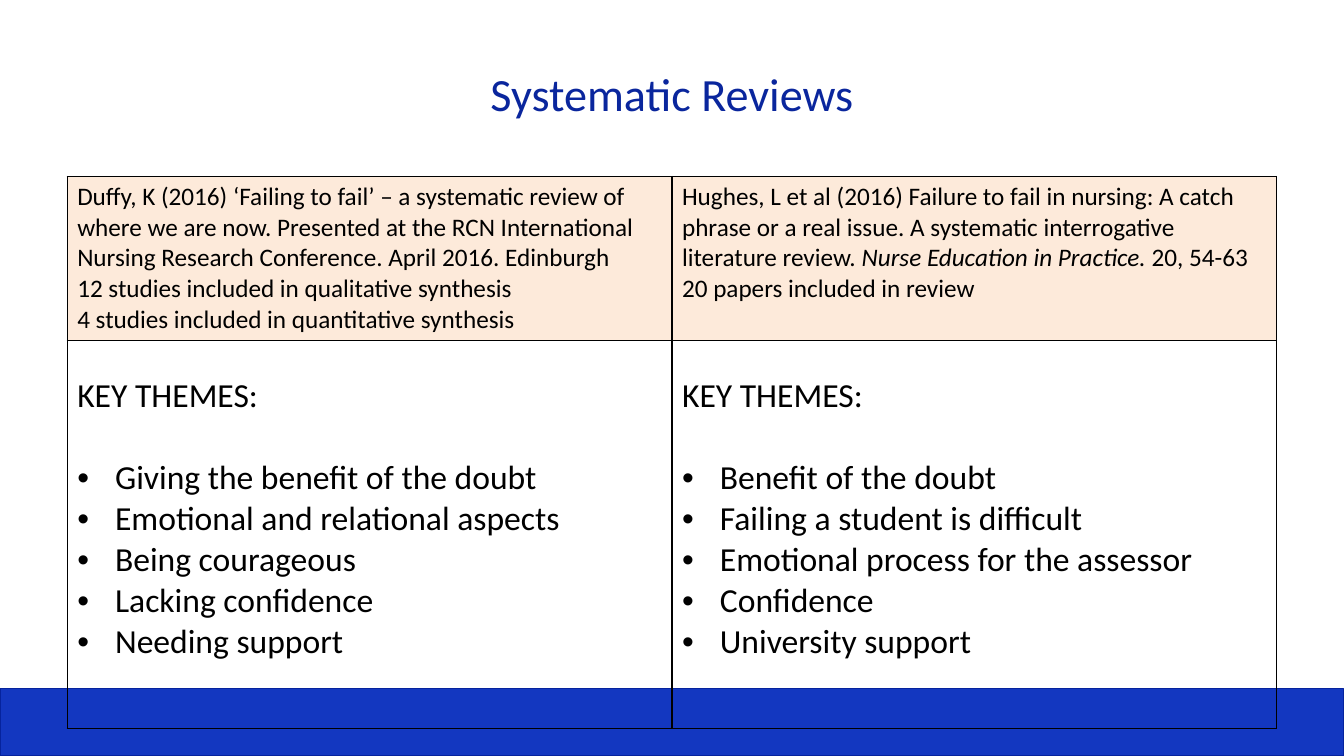
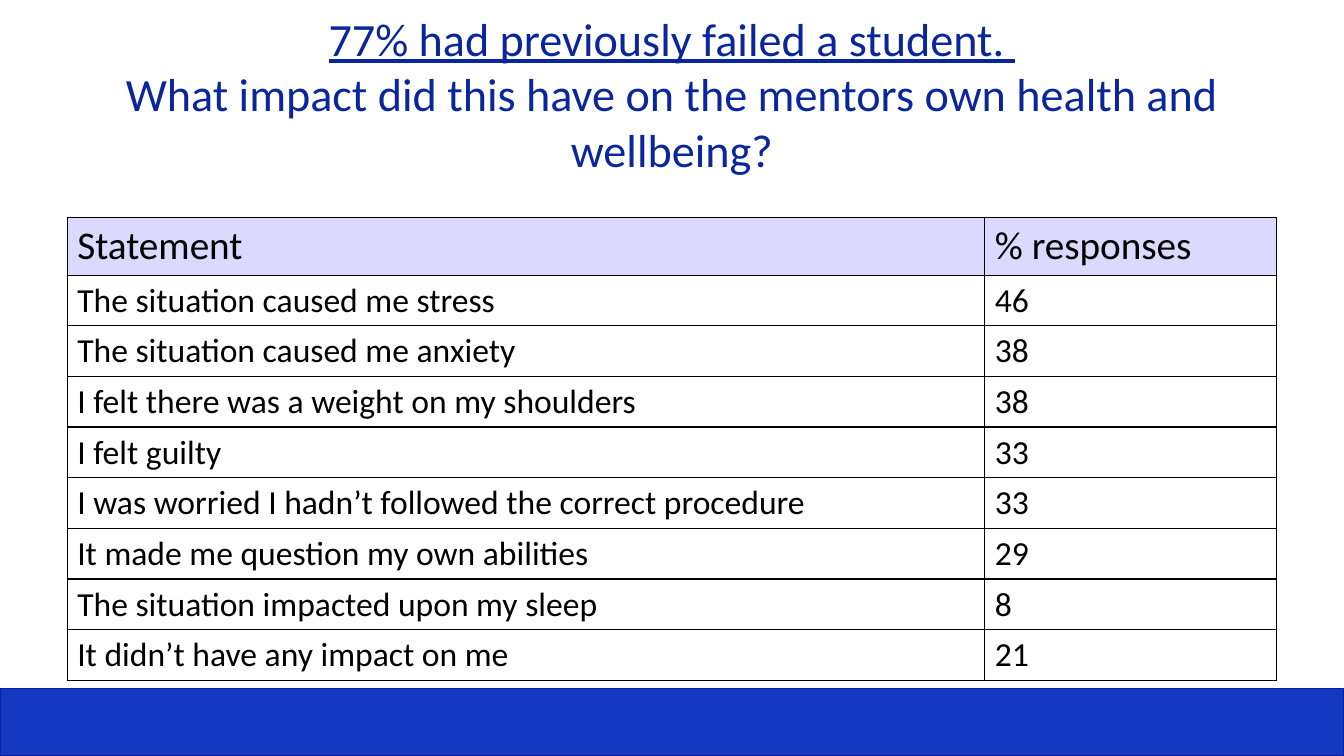
from dataclasses import dataclass

from lxml.etree import SubElement
from pptx import Presentation
from pptx.dml.color import RGBColor
from pptx.enum.shapes import MSO_SHAPE as Shape
from pptx.enum.text import MSO_ANCHOR as Anchor, PP_ALIGN as Align
from pptx.oxml import parse_xml
from pptx.oxml.ns import nsdecls, qn
from pptx.util import Pt

EMU_PER_PX = 9525
SLIDE_W, SLIDE_H = 1280, 720
MARGIN, CONTENT_W = 64, 1152


def px(length):
    return length * EMU_PER_PX


def rgb(hex_colour):
    return RGBColor.from_string(hex_colour)


@dataclass
class Phrase:
    """A stretch of text in one style."""
    text: str
    italic: bool = False
    underline: bool = False


@dataclass
class Line:
    """A paragraph of a table cell."""
    phrases: list
    size: int
    bullet: bool = False
    gap: int = 0


class Deck:
    FONT = "Calibri"
    TITLE, TEXT, BORDER = "0A269D", "000000", "000000"
    BAND, BAND_EDGE = "1337C0", "06239D"
    BAND_H = 64
    BULLET_INDENT = 36

    def __init__(self):
        self.prs = Presentation()
        self.prs.slide_width, self.prs.slide_height = px(SLIDE_W), px(SLIDE_H)
        self.slide = None

    def new_slide(self, *title_lines):
        self.slide = self.prs.slides.add_slide(self.prs.slide_layouts[6])
        self.band()
        self.title(title_lines)

    def band(self):
        band = self.slide.shapes.add_shape(
            Shape.RECTANGLE, 0, px(SLIDE_H - self.BAND_H), px(SLIDE_W), px(self.BAND_H))
        band.shadow.inherit = False
        band.fill.solid()
        band.fill.fore_color.rgb = rgb(self.BAND)
        band.line.color.rgb = rgb(self.BAND_EDGE)
        band.line.width = Pt(0.75)

    def title(self, lines):
        box = self.slide.shapes.add_textbox(px(MARGIN), px(29), px(CONTENT_W), px(120))
        frame = box.text_frame
        frame.word_wrap = True
        frame.vertical_anchor = Anchor.MIDDLE
        paragraph = frame.paragraphs[0]
        paragraph.alignment = Align.CENTER
        for number, phrase in enumerate(lines):
            if number:
                paragraph.add_line_break()
            self.run(paragraph, phrase, 33, self.TITLE)

    def run(self, paragraph, phrase, size, colour):
        run = paragraph.add_run()
        run.text = phrase.text
        font = run.font
        font.name, font.size = self.FONT, Pt(size)
        font.color.rgb = rgb(colour)
        font.italic, font.underline = phrase.italic, phrase.underline

    def table(self, top, widths, heights, rows, header_fill, body_top=5):
        """Draw rows of cells, each a list of lines; body_top is the body's top inset."""
        frame = self.slide.shapes.add_table(
            len(rows), len(widths), px(MARGIN), px(top), px(sum(widths)), px(sum(heights)))
        table = frame.table
        table.first_row = table.horz_banding = False
        for column, width in zip(table.columns, widths):
            column.width = px(width)
        for row, height in zip(table.rows, heights):
            row.height = px(height)
        for r, cells in enumerate(rows):
            for c, lines in enumerate(cells):
                cell = table.cell(r, c)
                if r == 0:
                    cell.fill.solid()
                    cell.fill.fore_color.rgb = rgb(header_fill)
                else:
                    cell.fill.background()
                    cell.margin_top = px(body_top)
                self.borders(cell)
                self.cell_text(cell.text_frame, lines)

    def borders(self, cell):
        properties = cell._tc.get_or_add_tcPr()
        for position, side in enumerate(("lnL", "lnR", "lnT", "lnB")):
            properties.insert(position, parse_xml(
                f'<a:{side} {nsdecls("a")} w="{Pt(1)}"><a:solidFill>'
                f'<a:srgbClr val="{self.BORDER}"/></a:solidFill></a:{side}>'))

    def cell_text(self, frame, lines):
        for number, line in enumerate(lines):
            paragraph = frame.add_paragraph() if number else frame.paragraphs[0]
            if line.gap:
                paragraph.space_before = Pt(line.gap)
            if line.bullet:
                self.bullet(paragraph)
            for phrase in line.phrases:
                self.run(paragraph, phrase, line.size, self.TEXT)

    def bullet(self, paragraph):
        properties = paragraph._p.get_or_add_pPr()
        properties.set("marL", str(px(self.BULLET_INDENT)))
        properties.set("indent", str(-px(self.BULLET_INDENT)))
        SubElement(properties, qn("a:buFont")).set("typeface", "Arial")
        SubElement(properties, qn("a:buChar")).set("char", "•")


def plain(text, size):
    return Line([Phrase(text)], size)


def key_themes(*themes):
    bullets = [Line([Phrase(theme)], 24, bullet=True, gap=0 if number else 29)
               for number, theme in enumerate(themes)]
    return [plain("KEY THEMES:", 24), *bullets]


def systematic_reviews(deck):
    deck.new_slide(Phrase("Systematic Reviews"))
    duffy = [plain(text, 18) for text in (
        "Duffy, K (2016) ‘Failing to fail’ – a systematic review of where we are now. "
        "Presented at the RCN International Nursing Research Conference. "
        "April 2016. Edinburgh",
        "12 studies included in qualitative synthesis",
        "4 studies included in quantitative synthesis")]
    hughes = [
        Line([Phrase("Hughes, L et al (2016) Failure to fail in nursing: A catch phrase or "
                     "a real issue. A systematic interrogative literature review. "),
              Phrase("Nurse Education in Practice.", italic=True),
              Phrase(" 20, 54-63")], 18),
        plain("20 papers included in review", 18)]
    themes = [
        key_themes("Giving the benefit of the doubt", "Emotional and relational aspects",
                   "Being courageous", "Lacking confidence", "Needing support"),
        key_themes("Benefit of the doubt", "Failing a student is difficult",
                   "Emotional process for the assessor", "Confidence",
                   "University support")]
    deck.table(168, [CONTENT_W // 2] * 2, [156, 370], [[duffy, hughes], themes],
               header_fill="FDEADA", body_top=34)


def impact_on_mentors(deck):
    deck.new_slide(
        Phrase("77% had previously failed a student. ", underline=True),
        Phrase("What impact did this have on the mentors own health and wellbeing?"))
    responses = [
        ("The situation caused me stress", 46),
        ("The situation caused me anxiety", 38),
        ("I felt there was a weight on my shoulders", 38),
        ("I felt guilty", 33),
        ("I was worried I hadn’t followed the correct procedure", 33),
        ("It made me question my own abilities", 29),
        ("The situation impacted upon my sleep", 8),
        ("It didn’t have any impact on me", 21)]
    header = [[plain(text, 28)] for text in ("Statement", "% responses")]
    body = [[[plain(statement, 24)], [plain(str(percent), 24)]]
            for statement, percent in responses]
    deck.table(207, [874, 278], [55] + [48] * len(body), [header, *body],
               header_fill="DBD9FD")


def main():
    deck = Deck()
    systematic_reviews(deck)
    impact_on_mentors(deck)
    deck.prs.save("out.pptx")


if __name__ == "__main__":
    main()
